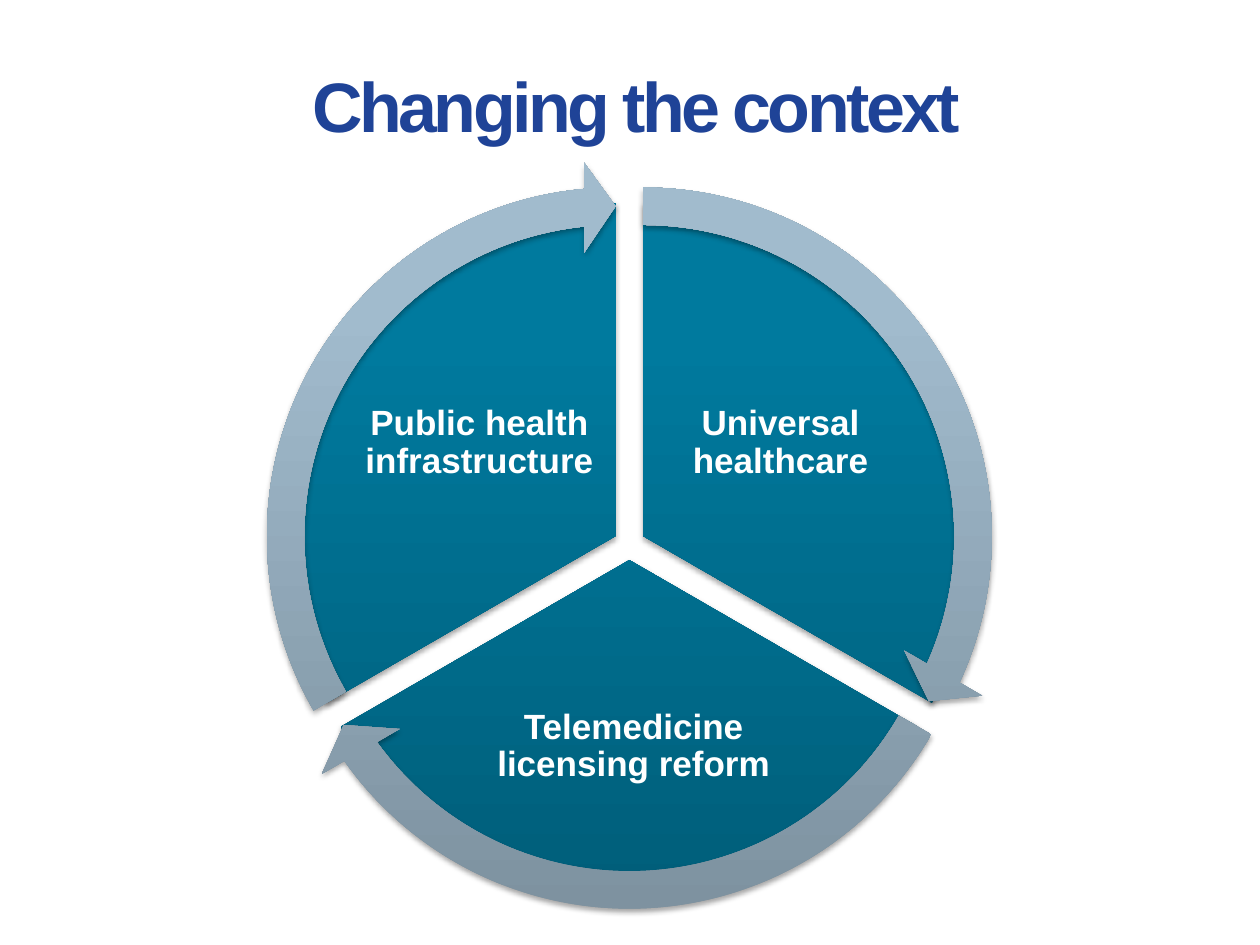
"""Build the slide "Changing the context": a three-part cycle with arrows."""
from copy import deepcopy

from lxml.etree import SubElement
from pptx import Presentation
from pptx.dml.color import RGBColor
from pptx.enum.shapes import MSO_SHAPE
from pptx.enum.text import MSO_ANCHOR, MSO_AUTO_SIZE, PP_ALIGN
from pptx.oxml.ns import qn
from pptx.util import Inches, Pt

THEME = {
    "font": "Arial",
    "title": RGBColor.from_string("1F4397"),
    "label": RGBColor.from_string("FFFFFF"),
    "slice": ("005E7A", "007A9E", "007B9F"),
    "arrow": ("7C909E", "A1BBCD", "A1BCCF"),
    "stops": (0, 0.8, 1),
    "shadow": "000000",
    "title_size": Pt(40),
    "label_size": Pt(20),
}


def write_text(holder, text, *, size, color, anchor, margins, line_spacing,
               space_after=0, indent=0, tracking=0):
    frame = holder.text_frame
    frame.word_wrap = True
    frame.auto_size = MSO_AUTO_SIZE.NONE
    frame.vertical_anchor = anchor
    frame.margin_left = frame.margin_right = Inches(margins[0])
    frame.margin_top = frame.margin_bottom = Inches(margins[1])
    paragraph = frame.paragraphs[0]
    paragraph.alignment = PP_ALIGN.CENTER
    paragraph.line_spacing = line_spacing
    paragraph.space_before = Pt(0)
    paragraph.space_after = Pt(space_after)
    if indent:
        paragraph._p.get_or_add_pPr().set("marL", str(Inches(indent)))
    run = paragraph.add_run()
    run.text = text
    run.font.name = THEME["font"]
    run.font.size = size
    run.font.bold = True
    run.font.color.rgb = color
    if tracking:
        run.font._element.set("spc", str(tracking * 100))


def add_cycle_part(kind, left, top, size, adjustments, colors):
    part = slide.shapes.add_shape(kind, Inches(left), Inches(top), Inches(size), Inches(size))
    for index, value in enumerate(adjustments):
        part.adjustments[index] = value
    part.line.fill.background()
    part.fill.gradient()
    part.fill.gradient_angle = 90
    stop_list = part._element.spPr.find(qn("a:gradFill")).find(qn("a:gsLst"))
    stop_list.append(deepcopy(stop_list[-1]))
    for stop, position, color in zip(part.fill.gradient_stops, THEME["stops"], colors):
        stop.position = position
        stop.color.rgb = RGBColor.from_string(color)
    part.shadow.inherit = False
    effects = part._element.spPr.find(qn("a:effectLst"))
    shadow = SubElement(effects, qn("a:outerShdw"), blurRad=str(Pt(3.1)),
                        dist=str(Pt(1.8)), dir="5400000", rotWithShape="0")
    shade = SubElement(shadow, qn("a:srgbClr"), val=THEME["shadow"])
    SubElement(shade, qn("a:alpha"), val="35000")


deck = Presentation()
deck.slide_width, deck.slide_height = Inches(10), Inches(7.5)
slide = deck.slides.add_slide(deck.slide_layouts[5])

title = slide.shapes.title
title.left, title.top = Inches(0.08), Inches(0.51)
title.width, title.height = Inches(9.84), Inches(0.69)
write_text(title, "Changing the context", size=THEME["title_size"], color=THEME["title"],
           anchor=MSO_ANCHOR.BOTTOM, margins=(0.07, 0.04), line_spacing=0.8,
           indent=0.1, tracking=-2)

SLICE_SIZE, ARROW_SIZE, ARROW_OFFSET = 5.29, 5.95, 0.33
cycle = [
    ("Universal healthcare", (2.46, 1.61), (162, 18), (14.73, 161.99),
     (5.25, 2.73, 1.89, 1.58)),
    ("Telemedicine licensing reform", (2.35, 1.8), (18, 90), (86.72, 18),
     (3.61, 5.23, 2.84, 1.39)),
    ("Public health infrastructure", (2.24, 1.61), (90, 162), (158.73, 90),
     (2.86, 2.73, 1.89, 1.58)),
]

for topic, (left, top), slice_angles, _, label_box in cycle:
    add_cycle_part(MSO_SHAPE.PIE, left, top, SLICE_SIZE, slice_angles, THEME["slice"])
    label = slide.shapes.add_textbox(*map(Inches, label_box))
    write_text(label, topic, size=THEME["label_size"], color=THEME["label"],
               anchor=MSO_ANCHOR.MIDDLE, margins=(0.03, 0.03), line_spacing=0.9,
               space_after=7)

for _, (left, top), _, (head_angle, tail_angle), _ in cycle:
    add_cycle_part(MSO_SHAPE.CIRCULAR_ARROW, left - ARROW_OFFSET, top - ARROW_OFFSET, ARROW_SIZE,
                   (0.05, 3.28, head_angle, tail_angle, 0.06), THEME["arrow"])

deck.save("out.pptx")
